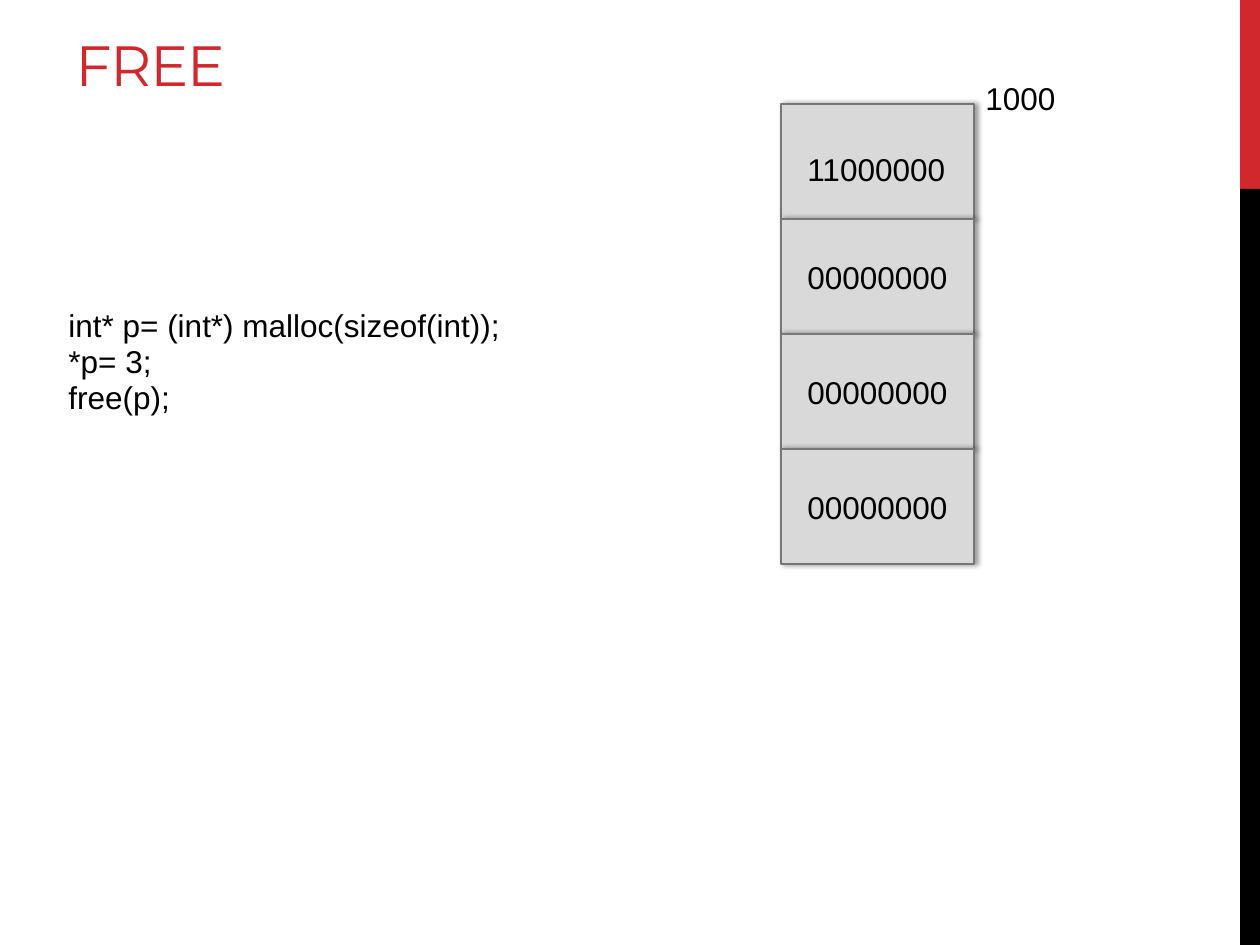
from lxml import etree
from pptx import Presentation
from pptx.dml.color import RGBColor
from pptx.enum.shapes import MSO_SHAPE
from pptx.enum.text import MSO_ANCHOR, MSO_AUTO_SIZE, PP_ALIGN
from pptx.oxml.ns import qn
from pptx.util import Pt

RECTANGLE = MSO_SHAPE.RECTANGLE
BOTTOM = MSO_ANCHOR.BOTTOM
FIXED_SIZE, GROW = MSO_AUTO_SIZE.NONE, MSO_AUTO_SIZE.SHAPE_TO_FIT_TEXT
LEFT = PP_ALIGN.LEFT
EMU_PER_PX = 914400 / 126
COLORS = {"red": "D1282E", "black": "000000", "cell": "D9D9D9", "border": "777777"}
CODE_LINES = ["int* p= (int*) malloc(sizeof(int));", "*p= 3;", "free(p);"]
MEMORY_BYTES = [("11000000", 40), ("00000000", 33), ("00000000", 33), ("00000000", 33)]


def px(*lengths):
    """Turn pixel lengths into EMU."""
    return [round(length * EMU_PER_PX) for length in lengths]


def color(name):
    """Look up a named colour."""
    return RGBColor.from_string(COLORS[name])


def format_paragraph(paragraph, font_name, size, color_name):
    """Set alignment and font of one paragraph."""
    paragraph.alignment = LEFT
    paragraph.font.name = font_name
    paragraph.font.size = Pt(size)
    paragraph.font.color.rgb = color(color_name)


def add_rectangle(shapes, box, fill):
    """Add a plain filled rectangle without line or shadow."""
    rectangle = shapes.add_shape(RECTANGLE, *px(*box))
    rectangle.shadow.inherit = False
    rectangle.fill.solid()
    rectangle.fill.fore_color.rgb = color(fill)
    rectangle.line.fill.background()
    return rectangle


def add_label(shapes, box, text):
    """Add one unwrapped line of text."""
    label = shapes.add_textbox(*px(*box))
    label.text_frame.word_wrap = False
    label.text_frame.auto_size = GROW
    label.text_frame.text = text
    format_paragraph(label.text_frame.paragraphs[0], "Arial", 18, "black")


def add_soft_shadow(shape):
    """Give a shape a soft shadow to its right."""
    effects = shape._element.spPr.find(qn("a:effectLst"))
    shadow = etree.SubElement(effects, qn("a:outerShdw"), blurRad=str(Pt(3.1)),
                              dist=str(Pt(1.8)), dir="0", rotWithShape="0")
    shade = etree.SubElement(shadow, qn("a:srgbClr"), val=COLORS["black"])
    etree.SubElement(shade, qn("a:alpha"), val="40000")


def add_side_bar(slide, left, top, width, height):
    """Draw the edge bar, one fifth red and the rest black."""
    red_height = height // 5
    add_rectangle(slide.shapes, (left, top, width, red_height), "red")
    add_rectangle(slide.shapes, (left, top + red_height, width, height - red_height), "black")


def add_title(slide, left, top, width, height):
    """Place and format the title placeholder."""
    title = slide.shapes.title
    title.left, title.top, title.width, title.height = px(left, top, width, height)
    frame = title.text_frame
    frame.text = "FREE"
    frame.auto_size = FIXED_SIZE
    frame.vertical_anchor = BOTTOM
    paragraph = frame.paragraphs[0]
    format_paragraph(paragraph, "Montserrat", 32.4, "red")
    paragraph.runs[0].font._element.set("spc", "-60")


def add_code(slide, left, top, width, line_pitch):
    """Stack the code lines."""
    for index, line in enumerate(CODE_LINES):
        add_label(slide.shapes, (left, top + index * line_pitch, width, 50), line)


def add_memory(slide, left, top, width, height):
    """Draw the column of memory bytes with its start address."""
    pitch = height // len(MEMORY_BYTES)
    cells = slide.shapes.add_group_shape().shapes
    labels = slide.shapes.add_group_shape().shapes
    for index, (bits, label_offset) in enumerate(MEMORY_BYTES):
        cell_top = top + index * pitch
        cell = add_rectangle(cells, (left, cell_top, width, pitch), "cell")
        cell.line.color.rgb = color("border")
        cell.line.width = Pt(1)
        add_soft_shadow(cell)
        add_label(labels, (left + 14, cell_top + label_offset, 166, 50), bits)
    add_label(slide.shapes, (left + width - 1, top - 31, 96, 50), "1000")


def main():
    """Build and save the slide."""
    presentation = Presentation()
    presentation.slide_width, presentation.slide_height = px(1260, 945)
    slide = presentation.slides.add_slide(presentation.slide_layouts[5])
    add_side_bar(slide, 1240, 0, 20, 945)
    add_title(slide, 63, 21, 1137, 83)
    add_code(slide, 56, 300, 461, 36)
    add_memory(slide, 781, 104, 193, 462)
    presentation.save("out.pptx")


if __name__ == "__main__":
    main()
